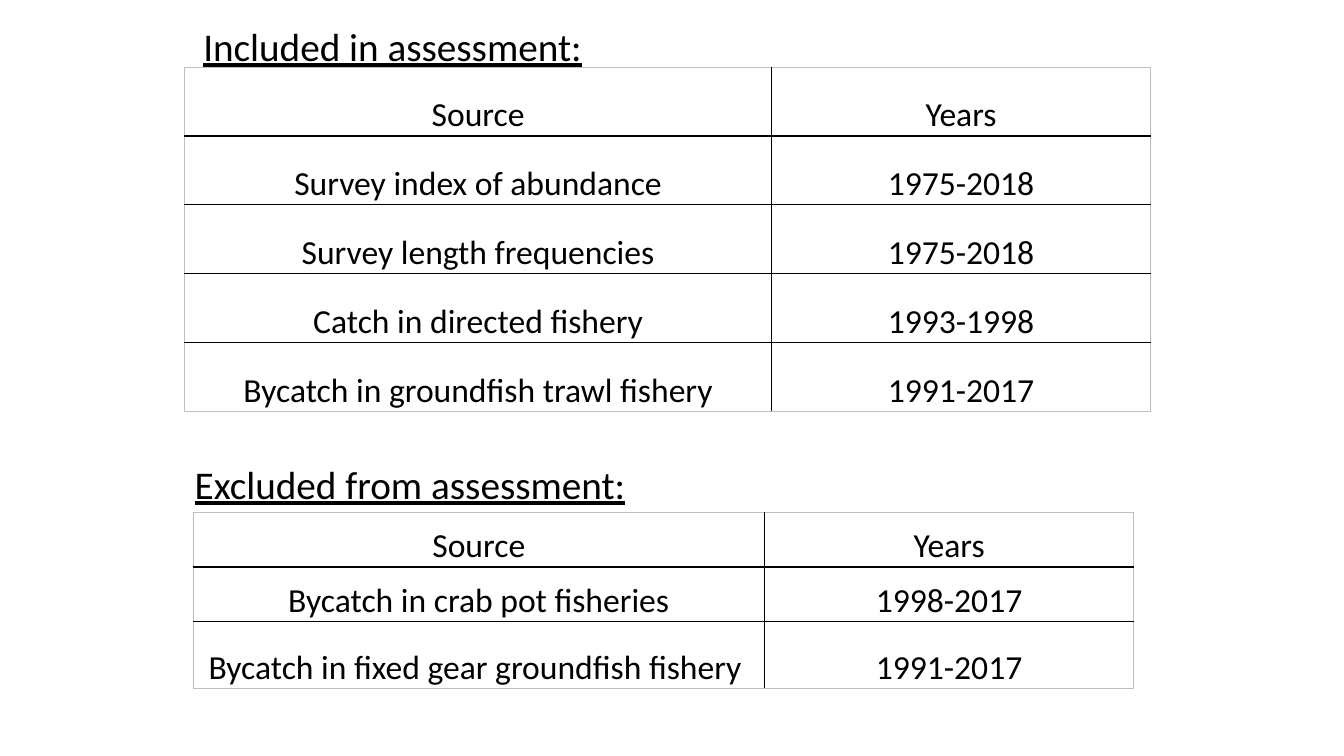
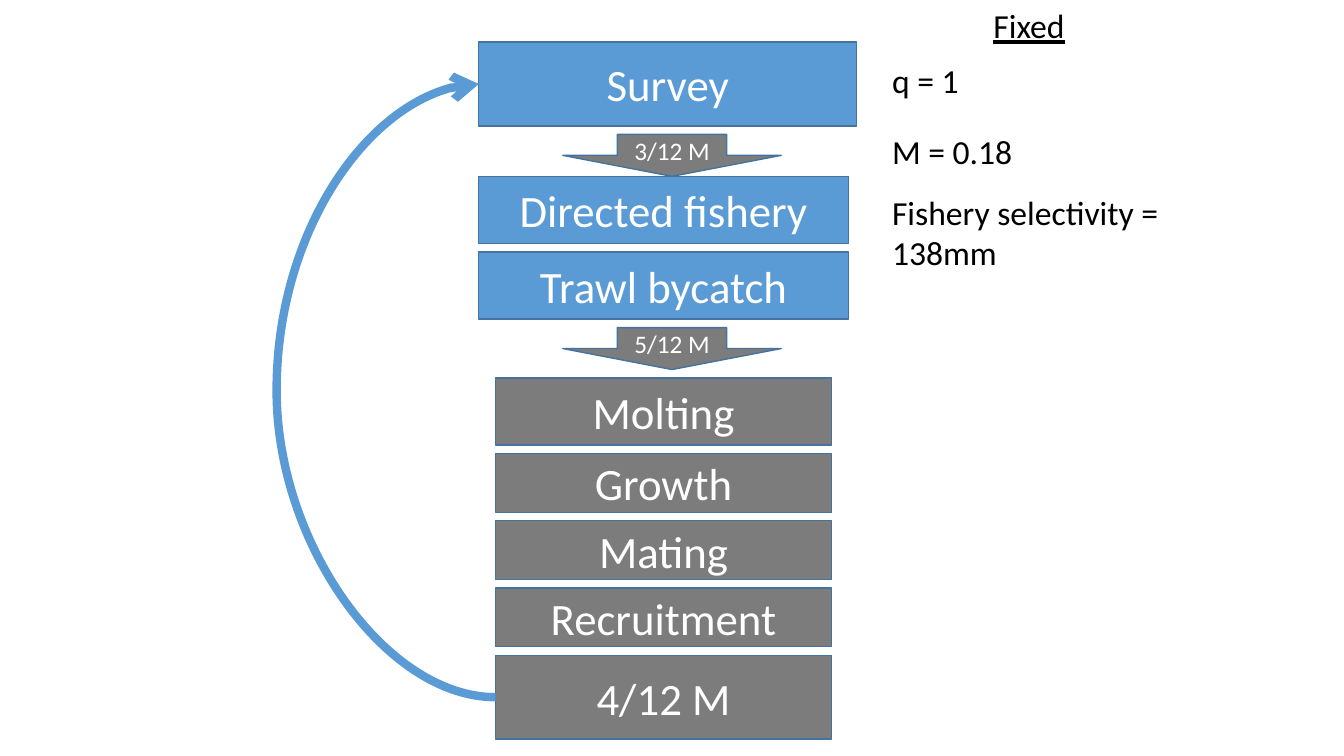
from lxml import etree
from pptx import Presentation
from pptx.dml.color import RGBColor
from pptx.enum.shapes import MSO_CONNECTOR, MSO_SHAPE
from pptx.enum.text import MSO_ANCHOR, MSO_AUTO_SIZE, PP_ALIGN
from pptx.oxml.ns import qn
from pptx.util import Pt

RECT, DOWN_ARROW = MSO_SHAPE.RECTANGLE, MSO_SHAPE.DOWN_ARROW
CURVE = MSO_CONNECTOR.CURVE
LEFT, CENTER = PP_ALIGN.LEFT, PP_ALIGN.CENTER
TOP, MIDDLE, BOTTOM = MSO_ANCHOR.TOP, MSO_ANCHOR.MIDDLE, MSO_ANCHOR.BOTTOM
NO_AUTOFIT = MSO_AUTO_SIZE.NONE

FONT = "Calibri"
COLORS = {
    "text": "000000",
    "light": "FFFFFF",
    "blue": "5B9BD5",
    "gray": "7C7C7C",
    "outline": "43739E",
    "grid": "000000",
    "frame": "BFBFBF",
}
LAYOUT_CONTENT, LAYOUT_TITLE_ONLY = 1, 5
GAP = 6

INCLUDED = [
    ("Source", "Years"),
    ("Survey index of abundance", "1975-2018"),
    ("Survey length frequencies", "1975-2018"),
    ("Catch in directed fishery", "1993-1998"),
    ("Bycatch in groundfish trawl fishery", "1991-2017"),
]
EXCLUDED = [
    ("Source", "Years"),
    ("Bycatch in crab pot fisheries", "1998-2017"),
    ("Bycatch in fixed gear groundfish fishery ", "1991-2017"),
]
STEPS = [
    ("Survey", RECT, "blue", 342, 270, 60, GAP),
    ("3/12 M", DOWN_ARROW, "gray", 402, 156, 30, 0),
    ("Directed fishery", RECT, "blue", 342, 264, 48, GAP),
    ("Trawl bycatch", RECT, "blue", 342, 264, 48, GAP),
    ("5/12 M", DOWN_ARROW, "gray", 402, 156, 30, GAP),
    ("Molting", RECT, "gray", 354, 240, 48, GAP),
    ("Growth", RECT, "gray", 354, 240, 42, GAP),
    ("Mating", RECT, "gray", 354, 240, 42, GAP),
    ("Recruitment", RECT, "gray", 354, 240, 42, GAP),
    ("4/12 M", RECT, "gray", 354, 240, 60, GAP),
]
FIXED = [("q = 1", 0), ("M = 0.18", 22), ("Fishery selectivity = 138mm", 14.6)]


def rgb(name):
    return RGBColor.from_string(COLORS[name])


def add_run(p, text, size, color="text", underline=False):
    r = p.add_run()
    r.text = text
    r.font.name = FONT
    r.font.size = Pt(size)
    r.font.color.rgb = rgb(color)
    if underline:
        r.font.underline = True


def place(sp, x, y, w, h):
    sp.left, sp.top, sp.width, sp.height = Pt(x), Pt(y), Pt(w), Pt(h)
    tf = sp.text_frame
    tf.word_wrap = True
    tf.auto_size = NO_AUTOFIT
    tf.vertical_anchor = TOP
    return tf


def set_heading(sp, text, box, size=28, align=LEFT):
    p = place(sp, *box).paragraphs[0]
    p.alignment = align
    add_run(p, text, size, underline=True)


def set_list(sp, items, box):
    tf = place(sp, *box)
    for i, (text, gap) in enumerate(items):
        p = tf.add_paragraph() if i else tf.paragraphs[0]
        p.space_before = Pt(gap)
        pPr = p._p.get_or_add_pPr()
        pPr.set("marL", "0")
        pPr.set("indent", "0")
        etree.SubElement(pPr, qn("a:buNone"))
        add_run(p, text, 24)


def set_borders(cell, edges):
    tcPr = cell._tc.get_or_add_tcPr()
    for side, outer in edges.items():
        ln = etree.SubElement(tcPr, qn(f"a:ln{side}"), w=str(Pt(0.75 if outer else 1)))
        fill = etree.SubElement(ln, qn("a:solidFill"))
        etree.SubElement(fill, qn("a:srgbClr"), val=COLORS["frame" if outer else "grid"])


def add_data_table(slide, rows, x, y, widths, heights):
    shape = slide.shapes.add_table(
        len(rows), len(widths), Pt(x), Pt(y), Pt(sum(widths)), Pt(sum(heights)))
    table = shape.table
    table.first_row = table.horz_banding = False
    for column, width in zip(table.columns, widths):
        column.width = Pt(width)
    for i, (values, height) in enumerate(zip(rows, heights)):
        table.rows[i].height = Pt(height)
        for j, value in enumerate(values):
            cell = table.cell(i, j)
            cell.margin_left = cell.margin_right = Pt(5)
            cell.margin_top = cell.margin_bottom = Pt(0)
            cell.vertical_anchor = BOTTOM
            set_borders(cell, {"L": j == 0, "R": j == len(widths) - 1,
                               "T": i == 0, "B": i == len(rows) - 1})
            cell.fill.background()
            p = cell.text_frame.paragraphs[0]
            p.alignment = CENTER
            p.line_spacing = 1.15
            add_run(p, value, 24)


def add_step(slide, text, kind, color, x, y, w, h):
    sp = slide.shapes.add_shape(kind, Pt(x), Pt(y), Pt(w), Pt(h))
    sp.shadow.inherit = False
    sp.fill.solid()
    sp.fill.fore_color.rgb = rgb(color)
    sp.line.color.rgb = rgb("outline")
    sp.line.width = Pt(1)
    tf = sp.text_frame
    tf.word_wrap = True
    tf.vertical_anchor = MIDDLE
    p = tf.paragraphs[0]
    p.alignment = CENTER
    add_run(p, text, 18 if kind == DOWN_ARROW else 32, "light")


def add_return_arrow(slide, x1, y1, x2, y2, bend):
    cxn = slide.shapes.add_connector(CURVE, Pt(x1), Pt(y1), Pt(x2), Pt(y2))
    cxn.line.color.rgb = rgb("blue")
    cxn.line.width = Pt(6)
    spPr = cxn._element.spPr
    spPr.find(qn("a:xfrm")).set("rot", "10800000")
    guides = spPr.find(qn("a:prstGeom")).find(qn("a:avLst"))
    etree.SubElement(guides, qn("a:gd"), name="adj1", fmla=f"val {bend}")
    etree.SubElement(spPr.find(qn("a:ln")), qn("a:tailEnd"), type="arrow")
    etree.SubElement(spPr, qn("a:effectLst"))


def build_sources(prs):
    slide = prs.slides.add_slide(prs.slide_layouts[LAYOUT_TITLE_ONLY])
    set_heading(slide.shapes.title, "Included in assessment:", (138, 12, 294, 41))
    add_data_table(slide, INCLUDED, 132, 48, (419, 271), [49.2] * len(INCLUDED))
    add_data_table(slide, EXCLUDED, 138, 366, (408, 264), (39, 39, 48))
    box = slide.shapes.add_textbox(0, 0, 0, 0)
    set_heading(box, "Excluded from assessment:", (132, 325, 454, 41))


def build_cycle(prs):
    slide = prs.slides.add_slide(prs.slide_layouts[LAYOUT_CONTENT])
    set_heading(slide.shapes.title, "Fixed", (630, 0, 210, 39), 24, CENTER)
    set_list(slide.placeholders[1], FIXED, (630, 39, 210, 160))
    y = 30
    for text, kind, color, x, w, h, gap in STEPS:
        add_step(slide, text, kind, color, x, y, w, h)
        y += h + gap
    add_return_arrow(slide, 342, 60, 354, 498, 1304500)


def main():
    prs = Presentation()
    prs.slide_width, prs.slide_height = Pt(960), Pt(540)
    build_sources(prs)
    build_cycle(prs)
    prs.save("out.pptx")


if __name__ == "__main__":
    main()
